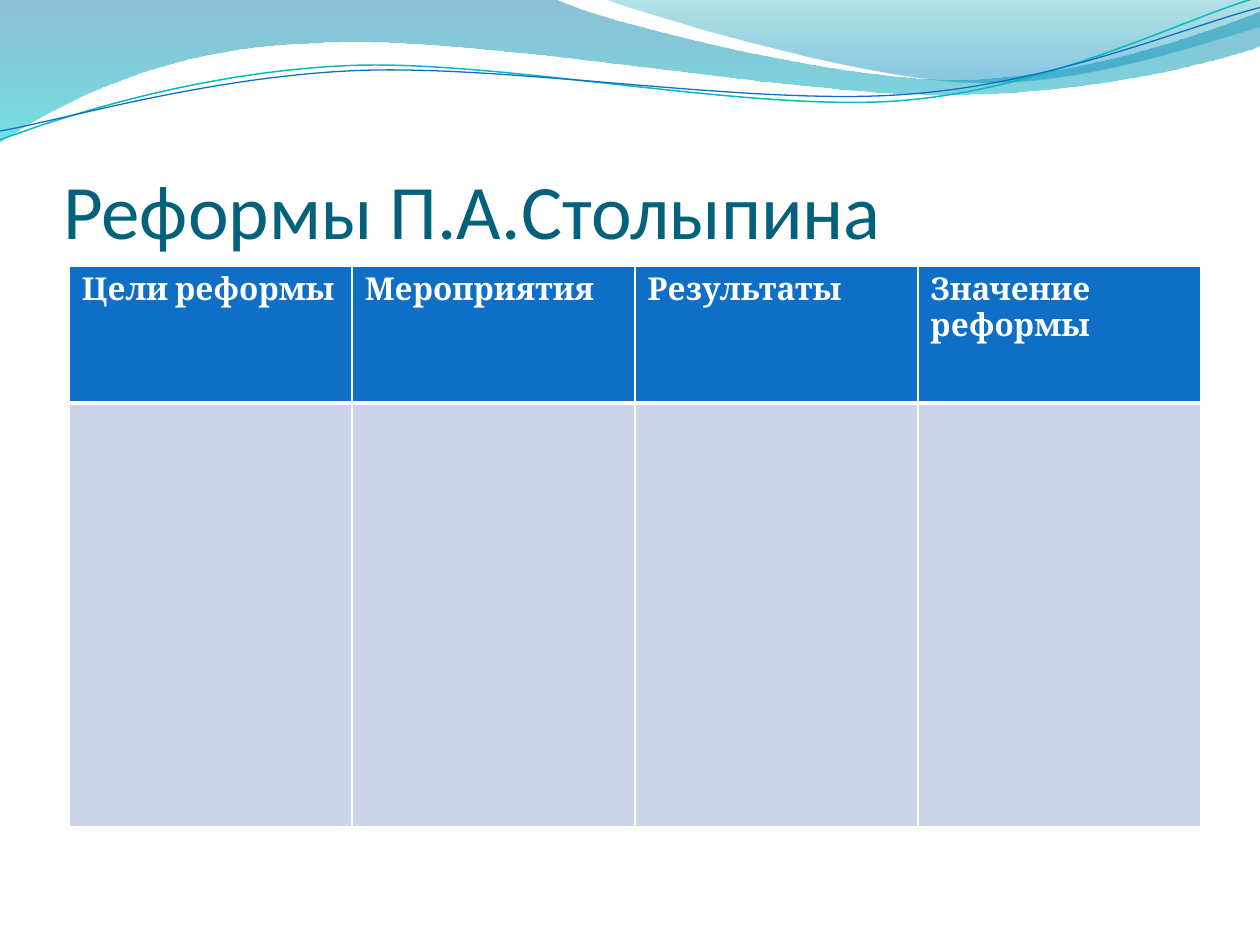
from math import cos, radians, sin

from lxml.etree import SubElement
from pptx import Presentation
from pptx.dml.color import RGBColor
from pptx.enum.text import MSO_ANCHOR, MSO_AUTO_SIZE, PP_ALIGN
from pptx.oxml.ns import qn
from pptx.util import Inches, Pt

HEADINGS = ["Цели реформы", "Мероприятия", "Результаты", "Значение реформы"]
STRAND_TILT = 2.7
STRAND_CENTER = (4.99, 0.58)

LEFT_WAVE = [
    (0, 0), [(4.4, -0.01)],
    [(4.76, 0.17), (6.64, 0.63), (7.58, 0.63)],
    [(8.53, 0.63), (9.58, 0.26), (10, 0.09)],
    [(10.01, 0.36)],
    [(9.83, 0.44), (8.7, 0.76), (7.46, 0.75)],
    [(6.22, 0.75), (3.82, 0.28), (2.57, 0.34)],
    [(1.29, 0.36), (0.46, 0.83), (-0.01, 1.13)],
]
RIGHT_WAVE = [
    (4.79, -0.01),
    [(5.09, 0.11), (6.82, 0.62), (7.69, 0.65)],
    [(8.56, 0.69), (9.61, 0.32), (10, 0.21)],
    [(10, 0)],
]
TEAL_STRAND = [
    (0, 1.11),
    [(0.48, 0.93), (1.58, 0.57), (2.77, 0.52)],
    [(3.95, 0.47), (5.93, 0.89), (7.13, 0.8)],
    [(8.33, 0.71), (9.38, 0.15), (9.98, -0.02)],
]
BLUE_STRAND = [
    (0, 1.04),
    [(0.47, 0.96), (1.64, 0.61), (2.83, 0.56)],
    [(4.03, 0.51), (5.97, 0.84), (7.17, 0.75)],
    [(8.36, 0.67), (9.41, 0.21), (10, 0.06)],
]


def color(hex_value):
    return RGBColor.from_string(hex_value)


def bend_segments(shape, segments):
    steps = iter(list(shape.element.iter(qn("a:lnTo"))))
    for segment in segments:
        parts = [next(steps) for point in segment]
        if len(parts) == 3:
            curve = parts[0].makeelement(qn("a:cubicBezTo"))
            parts[0].addprevious(curve)
            for part in parts:
                curve.append(part[0])
                part.getparent().remove(part)


def add_outline(slide, left, top, outline, close):
    start, *segments = outline
    points = [start] + [point for segment in segments for point in segment]
    corners = [(left + Inches(x), top + Inches(y)) for x, y in points]
    builder = slide.shapes.build_freeform(*corners[0], scale=1.0)
    builder.add_line_segments(corners[1:], close=close)
    shape = builder.convert_to_shape()
    shape.shadow.inherit = False
    bend_segments(shape, segments)
    return shape


def add_wave(slide, left, top, outline, stops):
    wave = add_outline(slide, left, top, outline, True)
    wave.line.fill.background()
    wave.fill.gradient()
    wave.fill.gradient_angle = 270
    for stop, (position, hex_value, opacity) in zip(wave.fill.gradient_stops, stops):
        stop.position = position
        stop.color.rgb = color(hex_value)
    for tint, (position, hex_value, opacity) in zip(
        wave.element.spPr.iter(qn("a:srgbClr")), stops
    ):
        SubElement(tint, qn("a:alpha"), val=str(opacity * 1000))


def tilt(point):
    angle = radians(STRAND_TILT)
    center_x, center_y = STRAND_CENTER
    dx, dy = point[0] - center_x, point[1] - center_y
    return (
        center_x + dx * cos(angle) - dy * sin(angle),
        center_y + dx * sin(angle) + dy * cos(angle),
    )


def add_strand(slide, left, top, outline, hex_value, width):
    start, *segments = outline
    level = [tilt(start)] + [[tilt(point) for point in segment] for segment in segments]
    strand = add_outline(slide, left, top, level, False)
    strand.rotation = 360 - STRAND_TILT
    strand.fill.background()
    strand.line.color.rgb = color(hex_value)
    strand.line.width = Pt(width)


def add_waves(slide, left, top):
    add_wave(slide, left, top, LEFT_WAVE, [(0, "0074A1", 45), (1, "00C6CF", 55)])
    add_wave(slide, left, top, RIGHT_WAVE, [(0, "00A1A9", 30), (0.8, "008BBF", 45)])
    add_strand(slide, left, top, TEAL_STRAND, "0AB8BF", 0.85)
    add_strand(slide, left, top, BLUE_STRAND, "0F6FC6", 0.75)


def place_title(slide, left, top, width, height):
    title = slide.shapes.title
    title.left, title.top, title.width, title.height = left, top, width, height
    frame = title.text_frame
    frame.text = "Реформы П.А.Столыпина"
    frame.auto_size = MSO_AUTO_SIZE.NONE
    frame.word_wrap = True
    frame.vertical_anchor = MSO_ANCHOR.BOTTOM
    frame.margin_left = frame.margin_right = frame.margin_bottom = 0
    frame.margin_top = Inches(0.05)
    heading = frame.paragraphs[0]
    heading.alignment = PP_ALIGN.LEFT
    heading.font.name = "Calibri"
    heading.font.size = Pt(44)
    heading.font.color.rgb = color("04617B")


def set_border(cell, side, width):
    border = SubElement(cell._tc.get_or_add_tcPr(), qn(f"a:ln{side}"), w=str(Pt(width)))
    paint = SubElement(border, qn("a:solidFill"))
    SubElement(paint, qn("a:srgbClr"), val="FFFFFF")


def style_cell(cell, fill, top_border, bottom_border):
    for side, width in zip("LRTB", (1, 1, top_border, bottom_border)):
        set_border(cell, side, width)
    cell.fill.solid()
    cell.fill.fore_color.rgb = color(fill)


def add_reform_table(slide, left, top, width, height):
    table = slide.shapes.add_table(2, len(HEADINGS), left, top, width, height).table
    header_height = Inches(1.09)
    table.rows[0].height = header_height
    table.rows[1].height = height - header_height
    for column, heading in enumerate(HEADINGS):
        header = table.cell(0, column)
        style_cell(header, "0F6FC6", 1, 3)
        style_cell(table.cell(1, column), "CCD5EA", 3, 1)
        header.text = heading
        font = header.text_frame.paragraphs[0].font
        font.name = "Cambria"
        font.size = Pt(18)
        font.bold = True
        font.color.rgb = color("FFFFFF")


def main():
    deck = Presentation()
    deck.slide_width, deck.slide_height = Inches(10), Inches(7.5)
    slide = deck.slides.add_slide(deck.slide_layouts[5])
    add_waves(slide, 0, 0)
    place_title(slide, Inches(0.5), Inches(0.77), Inches(9), Inches(1.25))
    add_reform_table(slide, Inches(0.55), Inches(2.11), Inches(8.98), Inches(4.45))
    deck.save("out.pptx")


if __name__ == "__main__":
    main()
